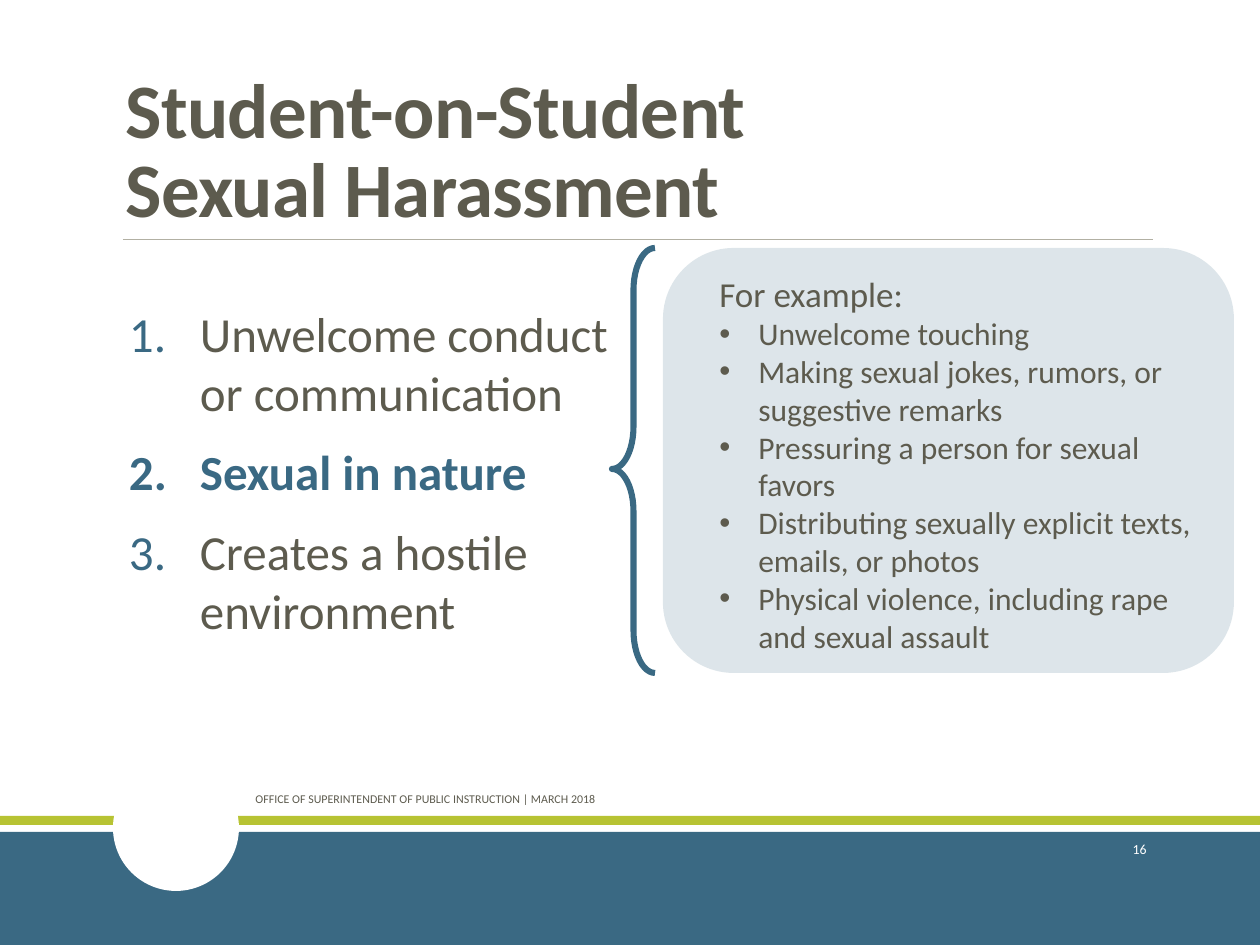
"""Build the slide on student-on-student sexual harassment."""
from dataclasses import dataclass

from lxml import etree
from pptx import Presentation, util as u
from pptx.dml.color import RGBColor
from pptx.enum import shapes, text
from pptx.oxml.ns import qn

SCALE = 914400 // 126


@dataclass(frozen=True)
class Theme:
    font: str = "Calibri"
    ink: str = "5D5B4E"
    blue: str = "3A6983"
    green: str = "B7C333"
    rule: str = "B2B0A3"
    white: str = "FFFFFF"
    title_size: float = 44
    body_size: float = 28
    lead_size: float = 20
    example_size: float = 18
    number_size: float = 7.9
    footer_size: float = 6.8


def px(*lengths):
    return [u.Emu(length * SCALE) for length in lengths]


def rgb(color):
    return RGBColor.from_string(color)


class SlideBuilder:
    def __init__(self, slide, theme):
        self.slide = slide
        self.theme = theme

    def shape(self, kind, box, fill=None, alpha=None, line=None, width=0, adjustments=()):
        shape = self.slide.shapes.add_shape(kind, *px(*box))
        shape.shadow.inherit = False
        if fill:
            shape.fill.solid()
            shape.fill.fore_color.rgb = rgb(fill)
        else:
            shape.fill.background()
        if alpha:
            color = shape.fill._xPr.find(".//" + qn("a:srgbClr"))
            etree.SubElement(color, qn("a:alpha"), val=str(alpha * 1000))
        if line:
            shape.line.color.rgb = rgb(line)
            shape.line.width = u.Pt(width)
        else:
            shape.line.fill.background()
        for index, value in enumerate(adjustments):
            shape.adjustments[index] = value

    def rule(self, left, top, right, color, width):
        line = self.slide.shapes.add_connector(
            shapes.MSO_CONNECTOR.STRAIGHT, *px(left, top, right, top))
        line.line.color.rgb = rgb(color)
        line.line.width = u.Pt(width)
        etree.SubElement(line._element.spPr, qn("a:effectLst"))

    def text_box(self, box, anchor=text.MSO_ANCHOR.TOP, side_inset=None):
        frame = self.slide.shapes.add_textbox(*px(*box)).text_frame
        frame.word_wrap = True
        frame.vertical_anchor = anchor
        if side_inset is not None:
            frame.margin_left, frame.margin_right = px(side_inset, side_inset)
        return frame

    def paragraph(self, frame, words, size, color=None, bold=False, bullet=None,
                  bullet_color=None, margin=0, hanging=0, space=0):
        first = not frame.paragraphs[0].runs
        paragraph = frame.paragraphs[0] if first else frame.add_paragraph()
        paragraph.text = words
        if bullet:
            properties = paragraph._p.get_or_add_pPr()
            properties.set("marL", str(margin * SCALE))
            properties.set("indent", str(-hanging * SCALE))
            if bullet_color:
                holder = etree.SubElement(properties, qn("a:buClr"))
                etree.SubElement(holder, qn("a:srgbClr"), val=bullet_color)
            if bullet == "number":
                etree.SubElement(properties, qn("a:buAutoNum"), type="arabicPeriod")
            else:
                etree.SubElement(properties, qn("a:buFont"), typeface="Arial")
                etree.SubElement(properties, qn("a:buChar"), char=bullet)
        if space:
            paragraph.space_after = u.Pt(space)
            if not first:
                paragraph.space_before = u.Pt(space)
        font = paragraph.font
        font.name = self.theme.font
        font.size = u.Pt(size)
        font.bold = bold
        font.color.rgb = rgb(color or self.theme.ink)
        return paragraph

    def title(self, box, words):
        frame = self.text_box(box, text.MSO_ANCHOR.BOTTOM)
        paragraph = self.paragraph(frame, words, self.theme.title_size, bold=True)
        paragraph.line_spacing = 0.85
        for run in paragraph.runs:
            run.font._element.set("spc", "-40")

    def label(self, box, words, size, color, align=text.PP_ALIGN.LEFT):
        frame = self.text_box(box, text.MSO_ANCHOR.MIDDLE)
        self.paragraph(frame, words, size, color).alignment = align

    def numbered_list(self, box, items, highlight):
        frame = self.text_box(box, side_inset=0)
        for item in items:
            strong = item == highlight
            self.paragraph(frame, item, self.theme.body_size,
                           self.theme.blue if strong else self.theme.ink, strong,
                           "number", self.theme.blue, margin=92, hanging=71, space=6)

    def examples(self, box, lead, items):
        frame = self.text_box(box)
        self.paragraph(frame, lead, self.theme.lead_size)
        for item in items:
            self.paragraph(frame, item, self.theme.example_size,
                           bullet="•", margin=39, hanging=39)


def main():
    theme = Theme()
    presentation = Presentation()
    presentation.slide_width, presentation.slide_height = u.Inches(10), u.Inches(7.5)
    slide = presentation.slides.add_slide(presentation.slide_layouts[6])
    builder = SlideBuilder(slide, theme)
    kinds = shapes.MSO_SHAPE

    builder.shape(kinds.RECTANGLE, (0, 816, 1260, 9), theme.green)
    builder.shape(kinds.RECTANGLE, (0, 832, 1260, 113), theme.blue)
    builder.shape(kinds.OVAL, (113, 765, 126, 126), theme.white)
    builder.rule(123, 239, 1153, theme.rule, 0.5)
    builder.label((1023, 824, 136, 50), "16", theme.number_size, theme.white,
                  text.PP_ALIGN.RIGHT)
    builder.label((243, 774, 499, 50),
                  "OFFICE OF SUPERINTENDENT OF PUBLIC INSTRUCTION | MARCH 2018",
                  theme.footer_size, theme.ink)

    builder.shape(kinds.ROUNDED_RECTANGLE, (663, 248, 571, 425), theme.blue, alpha=17)
    builder.examples((707, 266, 505, 398), "For example:", [
        "Unwelcome touching",
        "Making sexual jokes, rumors, or suggestive remarks",
        "Pressuring a person for sexual favors",
        "Distributing sexually explicit texts, emails, or photos",
        "Physical violence, including rape and sexual assault",
    ])
    builder.shape(kinds.LEFT_BRACE, (612, 248, 43, 425), line=theme.blue, width=3.5,
                  adjustments=(0.98, 0.52))
    builder.numbered_list((108, 297, 515, 387), [
        "Unwelcome conduct or communication",
        "Sexual in nature",
        "Creates a hostile environment",
    ], highlight="Sexual in nature")
    builder.title((113, 39, 1040, 200), "Student-on-Student\vSexual Harassment")

    presentation.save("out.pptx")


if __name__ == "__main__":
    main()
